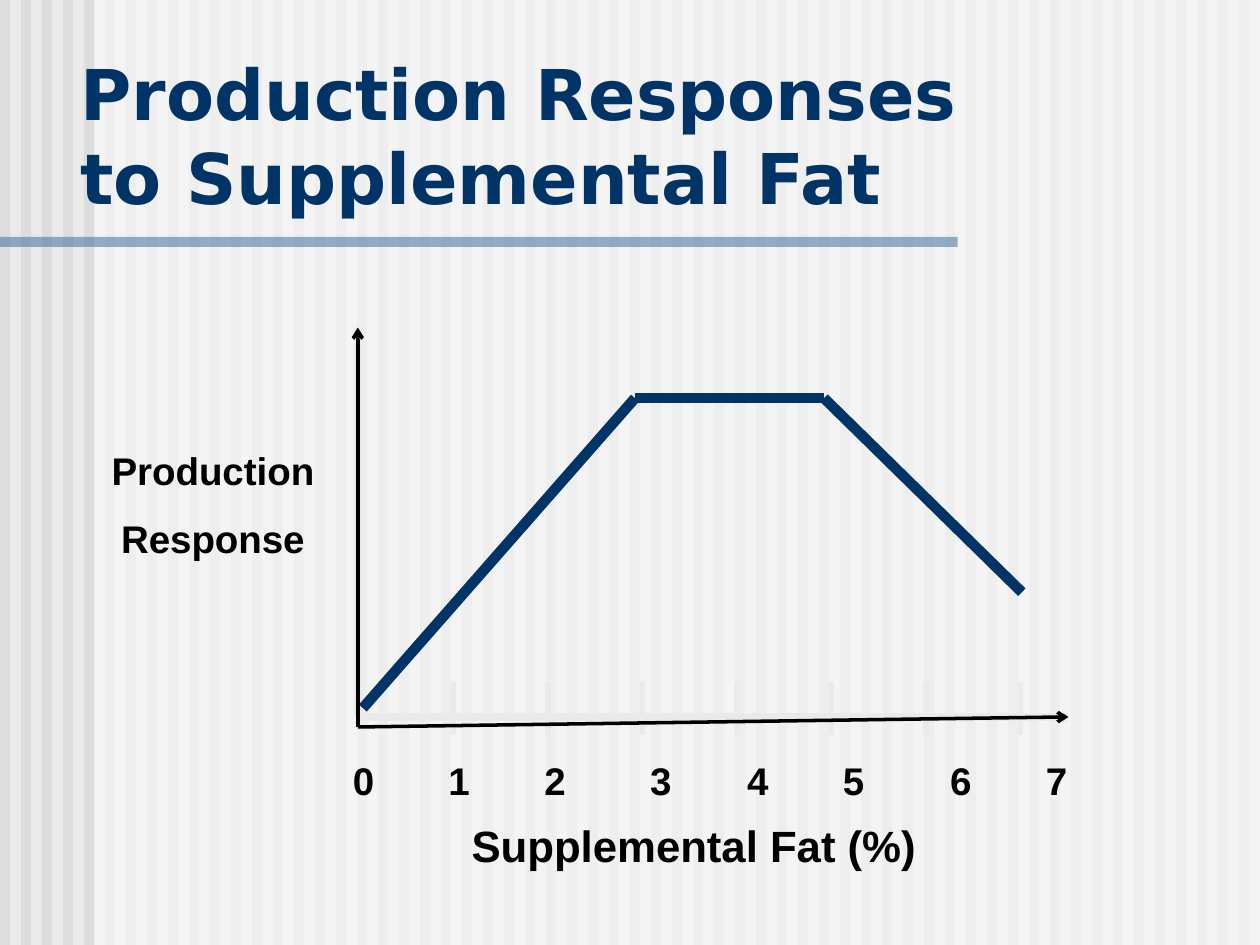
from lxml import etree
from pptx import Presentation
from pptx.dml.color import RGBColor
from pptx.enum.shapes import MSO_CONNECTOR, MSO_SHAPE
from pptx.enum.text import MSO_ANCHOR, PP_ALIGN
from pptx.oxml.ns import qn
from pptx.util import Inches, Pt

STRAIGHT = MSO_CONNECTOR.STRAIGHT
RECTANGLE = MSO_SHAPE.RECTANGLE
TOP, BOTTOM = MSO_ANCHOR.TOP, MSO_ANCHOR.BOTTOM
LEFT, CENTER = PP_ALIGN.LEFT, PP_ALIGN.CENTER
COLORS = {
    "background": "EAEAEA",
    "stripe": "DDDDDD",
    "veil": "FFFFFF",
    "rule": "336699",
    "navy": "003366",
    "tick": "EAEAEA",
    "black": "000000",
}
STRIPE_COUNT = 60
TICK_COUNT = 7
TAB_STOPS = (0.76, 1.52, 2.36, 3.13, 3.89, 4.74, 5.5)
RESPONSE_POINTS = ((2.88, 5.62), (5.04, 3.16), (6.54, 3.16), (8.11, 4.7))


def rgb(name):
    """Return the named colour."""
    return RGBColor.from_string(COLORS[name])


def add_band(page, left, top, width, height, color, opacity=100):
    """Add a borderless rectangle with an opacity in percent."""
    band = page.shapes.add_shape(
        RECTANGLE, Inches(left), Inches(top), Inches(width), Inches(height))
    band.shadow.inherit = False
    band.line.fill.background()
    band.fill.solid()
    band.fill.fore_color.rgb = rgb(color)
    if opacity < 100:
        value = band.fill._xPr.find(".//" + qn("a:srgbClr"))
        etree.SubElement(value, qn("a:alpha"), val=str(opacity * 1000))


def add_line(page, start, end, color, width, arrow=False):
    """Add a straight line, with an arrowhead at its end if asked."""
    line = page.shapes.add_connector(
        STRAIGHT, *(Inches(value) for value in (*start, *end)))
    line.line.color.rgb = rgb(color)
    line.line.width = Pt(width)
    if arrow:
        etree.SubElement(line.line._ln, qn("a:tailEnd"), type="arrow")
    etree.SubElement(line._element.spPr, qn("a:effectLst"))


def add_text(page, left, top, width, height, text, size, color="black",
             font="Arial", align=CENTER, anchor=TOP, insets=(0.08, 0.04)):
    """Add a bold text box and return it."""
    box = page.shapes.add_textbox(
        Inches(left), Inches(top), Inches(width), Inches(height))
    frame = box.text_frame
    frame.word_wrap = True
    frame.vertical_anchor = anchor
    frame.margin_left = frame.margin_right = Inches(insets[0])
    frame.margin_top = frame.margin_bottom = Inches(insets[1])
    frame.text = text
    for index, para in enumerate(frame.paragraphs):
        para.alignment = align
        if index:
            para.space_before = Pt(12.4)
        for span in para.runs:
            span.font.name = font
            span.font.size = Pt(size)
            span.font.bold = True
            span.font.color.rgb = rgb(color)
    return box


def set_tab_stops(box, stops):
    """Give the first paragraph of a box left tab stops."""
    properties = box.text_frame.paragraphs[0]._p.get_or_add_pPr()
    tabs = etree.SubElement(properties, qn("a:tabLst"))
    for stop in stops:
        etree.SubElement(tabs, qn("a:tab"), pos=str(Inches(stop)), algn="l")


def add_backdrop(page):
    """Add the striped background and the rule under the title."""
    page.background.fill.solid()
    page.background.fill.fore_color.rgb = rgb("background")
    for index in range(STRIPE_COUNT):
        add_band(page, index / 6, 0, 0.08, 7.5, "stripe")
    add_band(page, 0.75, 0, 9.25, 7.5, "veil", 50)
    add_band(page, 0, 1.88, 7.6, 0.08, "rule", 50)


def add_pale_axes(page):
    """Add the pale axes and tick marks behind the curve."""
    origin = (2.84, 5.69)
    for end in ((8.48, 5.69), (2.84, 2.6)):
        add_line(page, origin, end, "tick", 4.5)
    for index in range(TICK_COUNT):
        x = 3.6 + 0.75 * index
        add_line(page, (x, 5.41), (x, 5.83), "tick", 3)


def main():
    """Build the slide and save it."""
    deck = Presentation()
    deck.slide_width, deck.slide_height = Inches(10), Inches(7.5)
    page = deck.slides.add_slide(deck.slide_layouts[6])
    add_backdrop(page)
    add_text(page, 0.54, 0.33, 7.92, 1.45,
             "Production Responses\vto Supplemental Fat", 40, "navy",
             "DejaVu Sans", LEFT, BOTTOM, (0.1, 0.05))
    add_pale_axes(page)
    scale = add_text(page, 2.72, 5.97, 6.27, 0.48,
                     "\t".join(str(value) for value in range(8)), 22,
                     align=LEFT)
    set_tab_stops(scale, TAB_STOPS)
    add_text(page, 2.34, 6.46, 6.33, 0.53, "Supplemental Fat (%)", 25)
    for start, end in zip(RESPONSE_POINTS, RESPONSE_POINTS[1:]):
        add_line(page, start, end, "navy", 6)
    add_text(page, 0.78, 3.51, 1.82, 1.07, "Production\nResponse", 22)
    for end in ((2.84, 2.6), (8.48, 5.69)):
        add_line(page, (2.84, 5.77), end, "black", 2, arrow=True)
    deck.save("out.pptx")


if __name__ == "__main__":
    main()
